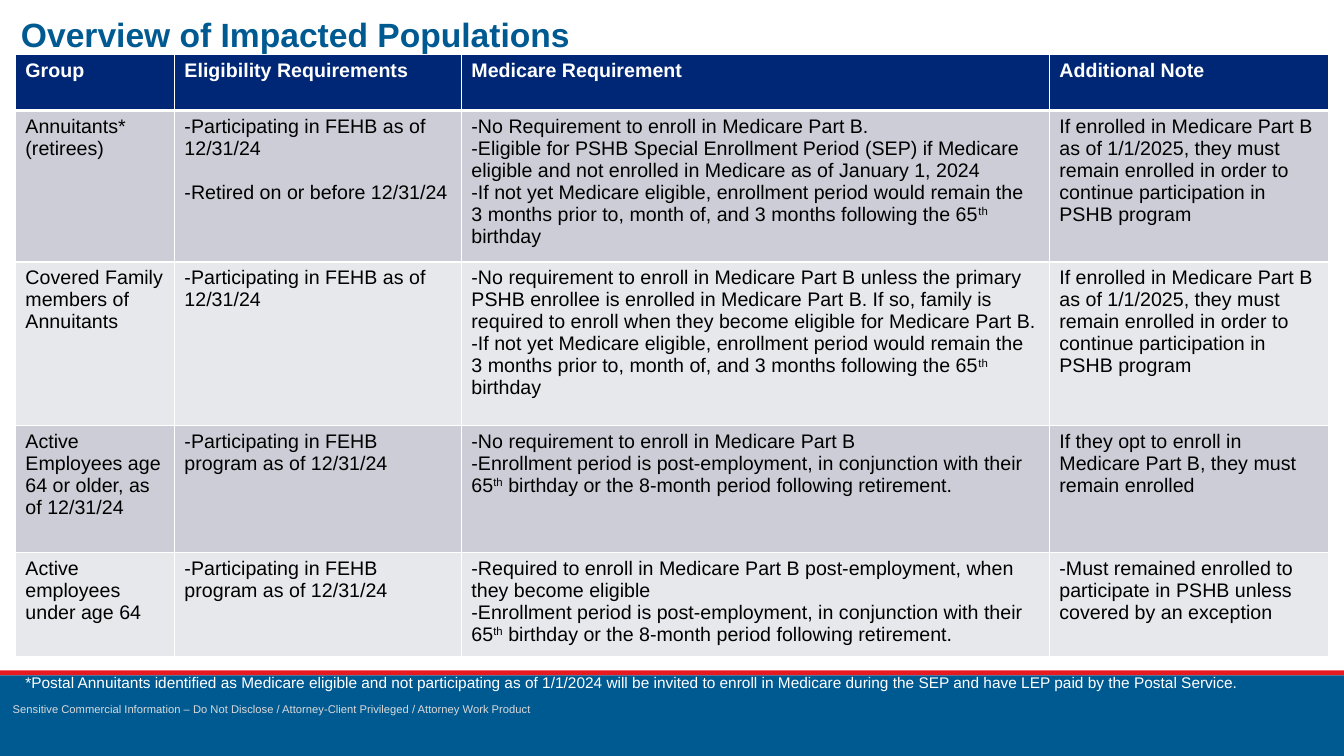
from lxml.etree import SubElement
from pptx import Presentation
from pptx.dml.color import RGBColor
from pptx.enum.shapes import MSO_SHAPE
from pptx.enum.text import MSO_ANCHOR
from pptx.oxml.ns import qn
from pptx.util import Pt

COLORS = {
    "red": "E71921", "blue": "005A92", "navy": "002776", "white": "FFFFFF",
    "black": "000000", "pale": "D9D9D9", "dark band": "CCCDD6", "light band": "E7E8EC",
}
FONT = "Arial"

TITLE = "Overview of Impacted Populations"
NOTE = ("*Postal Annuitants identified as Medicare eligible and not participating as of 1/1/2024 "
        "will be invited to enroll in Medicare during the SEP and have LEP paid by the Postal Service.")
NOTICE = ("Sensitive Commercial Information – Do Not Disclose / "
          "Attorney-Client Privileged / Attorney Work Product")

# Each cell is a list of paragraphs; text between carets is superscript.
BIRTHDAY = ("-If not yet Medicare eligible, enrollment period would remain the 3 months prior to, "
            "month of, and 3 months following the 65^th^ birthday")
POST_JOB = ("-Enrollment period is post-employment, in conjunction with their 65^th^ birthday "
            "or the 8-month period following retirement.")
IN_FEHB = "-Participating in FEHB as of 12/31/24"
IN_PROGRAM = "-Participating in FEHB program as of 12/31/24"
ROWS = [
    [["Group"], ["Eligibility Requirements"], ["Medicare Requirement"], ["Additional Note"]],
    [["Annuitants* (retirees)"],
     [IN_FEHB, "-Retired on or before 12/31/24"],
     ["-No Requirement to enroll in Medicare Part B.",
      "-Eligible for PSHB Special Enrollment Period (SEP) if Medicare eligible and not enrolled "
      "in Medicare as of January 1, 2024",
      BIRTHDAY],
     ["If enrolled in Medicare Part B as of 1/1/2025, they must remain enrolled in order to "
      "continue participation in PSHB program"]],
    [["Covered Family members of Annuitants"],
     [IN_FEHB],
     ["-No requirement to enroll in Medicare Part B unless the primary PSHB enrollee is enrolled "
      "in Medicare Part B. If so, family is required to enroll when they become eligible for "
      "Medicare Part B.",
      BIRTHDAY],
     ["If enrolled in Medicare Part B as of 1/1/2025, they must remain enrolled in order "
      "to continue participation in PSHB program"]],
    [["Active Employees age 64 or older, as of 12/31/24"],
     [IN_PROGRAM],
     ["-No requirement to enroll in Medicare Part B", POST_JOB],
     ["If they opt to enroll in Medicare Part B, they must remain enrolled"]],
    [["Active employees under age 64"],
     [IN_PROGRAM],
     ["-Required to enroll in Medicare Part B post-employment, when they become eligible",
      POST_JOB],
     ["-Must remained enrolled to participate in PSHB unless covered by an exception"]],
]
WIDTHS = [113.6, 205, 420, 199.4]
HEIGHTS = [40, 107.3, 117, 90.7, 70]
LEFT, TOP = 11, 39
BARS = [("red", 478.8, 3.6), ("blue", 482.4, 57.6)]
PAGE = (960, 540)


def color(name):
    return RGBColor.from_string(COLORS[name])


def write(para, text, size, ink, bold=False):
    """Add runs to a paragraph, raising each part between carets."""
    for i, part in enumerate(text.split("^")):
        run = para.add_run()
        run.text = part
        font = run.font
        font.name, font.size, font.bold = FONT, Pt(size), bold
        font.color.rgb = color(ink)
        if i % 2:
            run._r.get_or_add_rPr().set("baseline", "30000")


def add_text(slide, box, text, size, ink, spacing, bold=False):
    frame = slide.shapes.add_textbox(*map(Pt, box)).text_frame
    frame.word_wrap = True
    para = frame.paragraphs[0]
    para.line_spacing = spacing
    write(para, text, size, ink, bold)
    return frame


def add_edges(cell, base):
    props = cell._tc.get_or_add_tcPr()
    for side, width in (("L", 1), ("R", 1), ("T", 1), ("B", base)):
        line = SubElement(props, qn(f"a:ln{side}"), w=str(Pt(width)))
        fill = SubElement(line, qn("a:solidFill"))
        SubElement(fill, qn("a:srgbClr"), val=COLORS["white"])


def fill_cell(cell, paras, row, gap):
    head = row == 0
    add_edges(cell, 3 if head else 1)
    cell.fill.solid()
    band = "dark band" if row % 2 else "light band"
    cell.fill.fore_color.rgb = color("navy" if head else band)
    frame = cell.text_frame
    for i, text in enumerate(paras):
        para = frame.add_paragraph() if i else frame.paragraphs[0]
        if i and gap:
            para.space_before = Pt(gap)
        write(para, text, 14, "white" if head else "black", head)


def add_grid(slide):
    shape = slide.shapes.add_table(len(ROWS), len(WIDTHS), Pt(LEFT), Pt(TOP),
                                   Pt(sum(WIDTHS)), Pt(sum(HEIGHTS)))
    table = shape.table
    for col, width in zip(table.columns, WIDTHS):
        col.width = Pt(width)
    for r, (row, height) in enumerate(zip(ROWS, HEIGHTS)):
        table.rows[r].height = Pt(height)
        for c, paras in enumerate(row):
            # Eligibility points stand one line apart.
            fill_cell(table.cell(r, c), paras, r, 15.75 if c == 1 else 0)


def main():
    deck = Presentation()
    deck.slide_width, deck.slide_height = map(Pt, PAGE)
    slide = deck.slides.add_slide(deck.slide_layouts[6])
    for name, top, height in BARS:
        bar = slide.shapes.add_shape(MSO_SHAPE.RECTANGLE, 0, Pt(top), Pt(PAGE[0]), Pt(height))
        bar.shadow.inherit = False
        bar.fill.solid()
        bar.fill.fore_color.rgb = color(name)
        bar.line.fill.background()
    add_text(slide, (2, 495.4, 433.4, 18.7), NOTICE, 8, "pale", 1.3)
    title = add_text(slide, (15, -16.5, 828, 55.4), TITLE, 24, "blue", 1.06, True)
    title.vertical_anchor = MSO_ANCHOR.BOTTOM
    title.margin_left = title.margin_right = title.margin_top = title.margin_bottom = 0
    add_grid(slide)
    add_text(slide, (LEFT, 476.6, 949, 20), NOTE, 11, "white", 1.06)
    deck.save("out.pptx")


if __name__ == "__main__":
    main()
